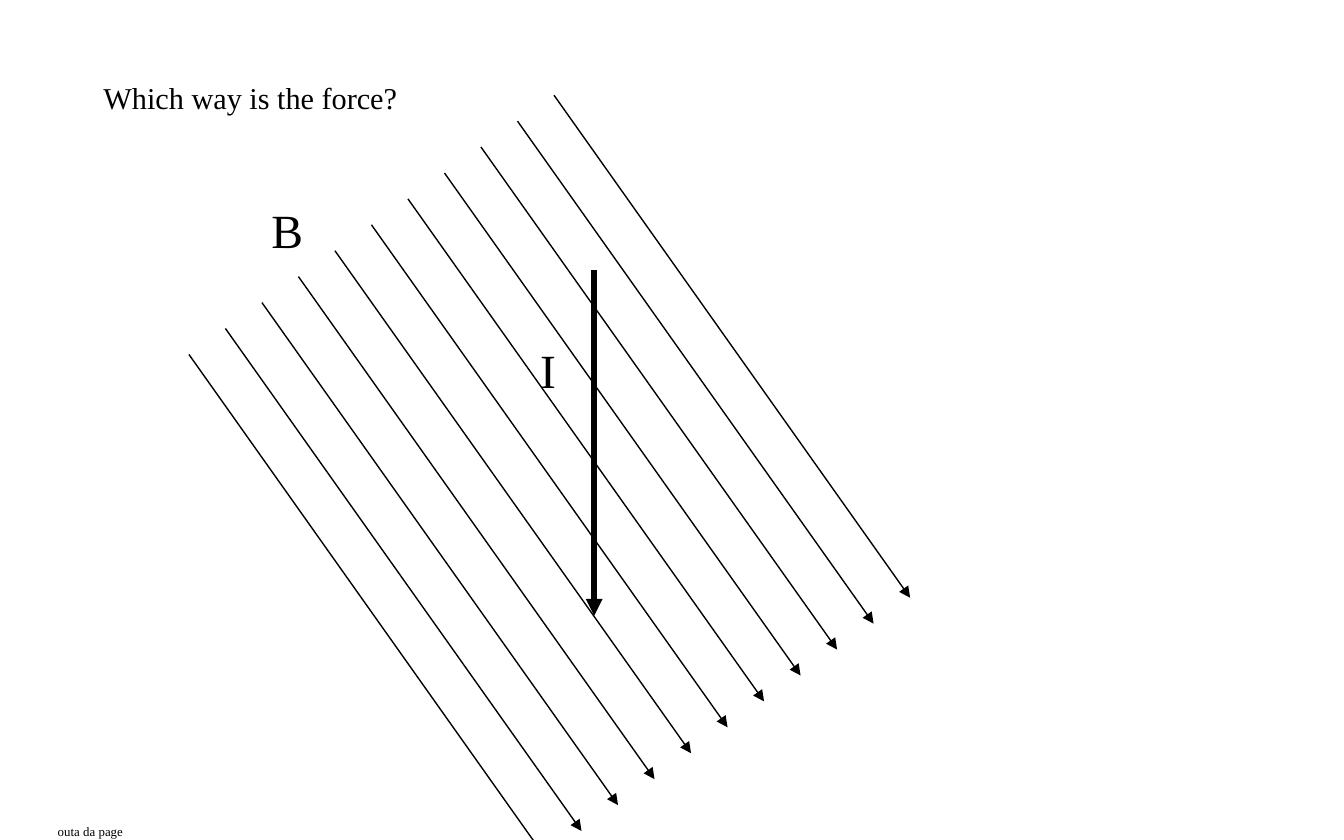
from dataclasses import dataclass

from lxml import etree
from pptx import Presentation
from pptx.dml.color import RGBColor
from pptx.enum.shapes import MSO_CONNECTOR
from pptx.enum.text import MSO_ANCHOR, MSO_AUTO_SIZE, PP_ALIGN
from pptx.oxml.ns import qn
from pptx.util import Cm, Pt

STRAIGHT = MSO_CONNECTOR.STRAIGHT
TOP = MSO_ANCHOR.TOP
GROW = MSO_AUTO_SIZE.SHAPE_TO_FIT_TEXT
LEFT = PP_ALIGN.LEFT

FONT = "Times New Roman"
BLACK = "000000"
SUBSCRIPT = "-25000"

FIELD_LINES = 11
FIELD_START = (10.47, 1.8)
FIELD_VECTOR = (6.73, 9.5)
FIELD_STEP = (-0.69, 0.49)


@dataclass
class Label:
    """A text and its box in centimetres, with its size in points."""
    text: str
    left: float
    top: float
    width: float
    height: float
    size: float


@dataclass
class Arrow:
    """An arrow from its start along a vector, in centimetres."""
    left: float
    top: float
    across: float
    down: float
    weight: float


TITLE = Label("Which way is the force?", 1.7, 0.71, 10.21, 1.45, 28)
LABELS = [
    Label("outa da page", 0.84, 15.16, 2.67, 0.76, 12),
    Label("I", 9.96, 5.28, 1.04, 2.13, 44),
    Label("B", 4.88, 2.64, 1.55, 2.13, 44),
]
CURRENT = Arrow(11.23, 5.11, 0, 6.53, 3)


def color(value: str) -> RGBColor:
    return RGBColor.from_string(value)


def write_label(shape, label: Label) -> None:
    """Place a text shape and format its single lowered run."""
    shape.left, shape.top = Cm(label.left), Cm(label.top)
    shape.width, shape.height = Cm(label.width), Cm(label.height)
    text_frame = shape.text_frame
    text_frame.text = label.text
    text_frame.word_wrap = False
    text_frame.auto_size = GROW
    text_frame.vertical_anchor = TOP
    paragraph = text_frame.paragraphs[0]
    paragraph.alignment = LEFT
    font = paragraph.runs[0].font
    font.name = FONT
    font.size = Pt(label.size)
    font.color.rgb = color(BLACK)
    paragraph.runs[0]._r.get_or_add_rPr().set("baseline", SUBSCRIPT)


def draw_arrow(shapes, arrow: Arrow) -> None:
    connector = shapes.add_connector(
        STRAIGHT, Cm(arrow.left), Cm(arrow.top),
        Cm(arrow.left + arrow.across), Cm(arrow.top + arrow.down))
    connector.line.color.rgb = color(BLACK)
    connector.line.width = Pt(arrow.weight)
    etree.SubElement(connector.line._get_or_add_ln(), qn("a:tailEnd"), type="triangle")
    etree.SubElement(connector._element.spPr, qn("a:effectLst"))


def main() -> None:
    presentation = Presentation()
    presentation.slide_width, presentation.slide_height = Cm(25.4), Cm(15.88)
    slide = presentation.slides.add_slide(presentation.slide_layouts[5])

    # Question
    write_label(slide.shapes.title, TITLE)

    # Current
    draw_arrow(slide.shapes, CURRENT)

    # Magnetic field: evenly spaced parallel arrows
    field = slide.shapes.add_group_shape()
    for index in range(FIELD_LINES):
        left, top = (start + index * step
                     for start, step in zip(FIELD_START, FIELD_STEP))
        draw_arrow(field.shapes, Arrow(left, top, *FIELD_VECTOR, 0.75))

    # Labels
    for label in LABELS:
        box = slide.shapes.add_textbox(0, 0, 0, 0)
        write_label(box, label)

    presentation.save("out.pptx")


if __name__ == "__main__":
    main()
